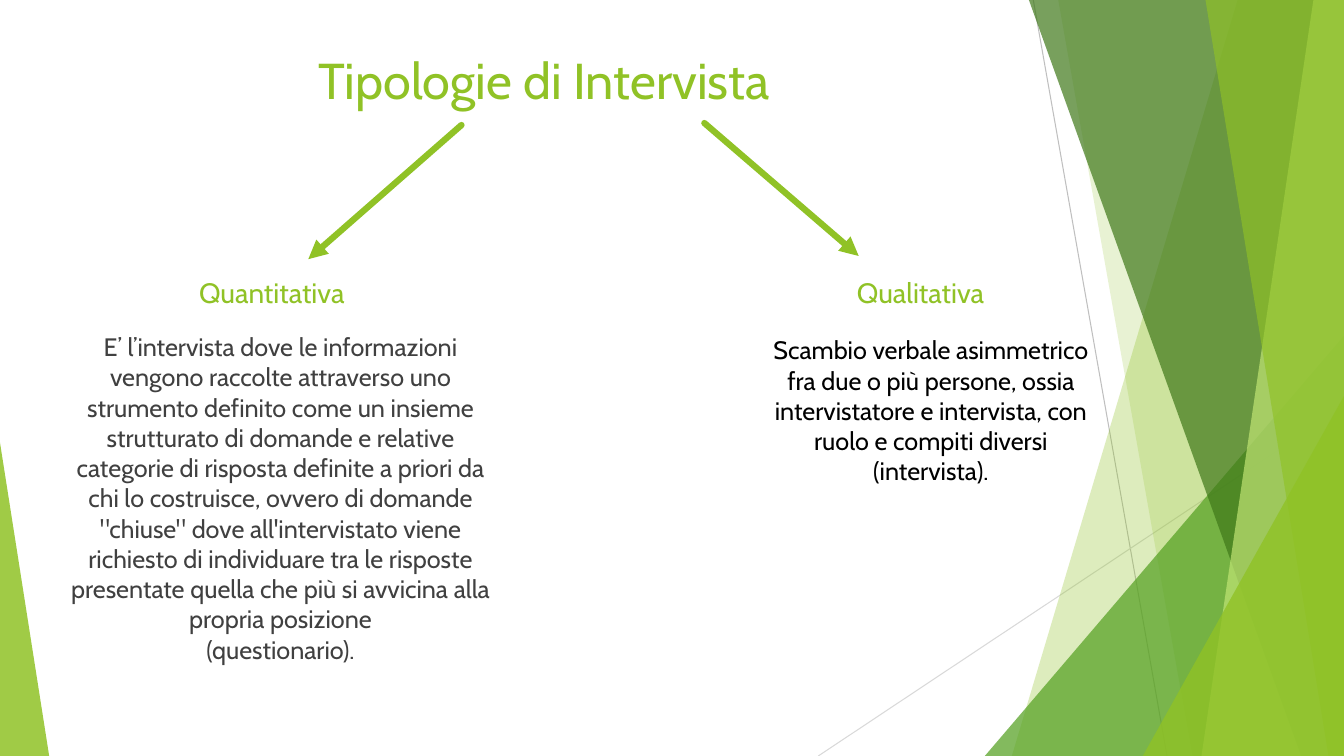
from dataclasses import dataclass

from lxml import etree
from pptx import Presentation
from pptx.dml.color import RGBColor
from pptx.enum.shapes import MSO_CONNECTOR, MSO_SHAPE
from pptx.enum.text import MSO_ANCHOR, MSO_AUTO_SIZE, PP_ALIGN
from pptx.oxml.ns import qn
from pptx.util import Cm, Pt

STRAIGHT = MSO_CONNECTOR.STRAIGHT
TRIANGLE = MSO_SHAPE.ISOSCELES_TRIANGLE
TOP = MSO_ANCHOR.TOP
GROW = MSO_AUTO_SIZE.SHAPE_TO_FIT_TEXT
FIXED = MSO_AUTO_SIZE.NONE
LEFT, CENTER = PP_ALIGN.LEFT, PP_ALIGN.CENTER

WIDTH, HEIGHT = 33.87, 19.05


@dataclass(frozen=True)
class Theme:
    font: str = "Cabin"
    green: str = "90C226"
    mid_green: str = "54A021"
    dark_green: str = "3F7819"
    pale_green: str = "C0E474"
    grey: str = "BFBFBF"
    light_grey: str = "D9D9D9"
    dark_text: str = "404040"
    black: str = "000000"
    title: int = 36
    heading: int = 20
    body: int = 18
    hairline: float = 0.75
    arrow: float = 4.5


class SlideBuilder:
    def __init__(self, slide, theme):
        self.s = slide
        self.theme = theme

    def paint(self, sp, color, opacity):
        """Fill a shape with a translucent colour, without outline or shadow."""
        sp.shadow.inherit = False
        sp.line.fill.background()
        sp.fill.solid()
        sp.fill.fore_color.rgb = RGBColor.from_string(color)
        clr = sp.fill._xPr.find(qn("a:solidFill"))[0]
        etree.SubElement(clr, qn("a:alpha"), val=str(opacity * 1000))

    def band(self, top_x, bottom_x, color, opacity):
        """Band from a slanted left edge to the right side of the slide."""
        corners = [(WIDTH, 0), (WIDTH, HEIGHT), (bottom_x, HEIGHT)]
        fb = self.s.shapes.build_freeform(Cm(top_x), 0)
        fb.add_line_segments([(Cm(x), Cm(y)) for x, y in corners], close=True)
        self.paint(fb.convert_to_shape(), color, opacity)

    def corner(self, x, y, width, apex, color, opacity):
        """Right triangle standing on the bottom edge of the slide."""
        sp = self.s.shapes.add_shape(
            TRIANGLE, Cm(x), Cm(y), Cm(width), Cm(HEIGHT - y))
        sp.adjustments[0] = apex
        self.paint(sp, color, opacity)

    def line(self, start, end, color, weight):
        points = [Cm(v) for v in (*start, *end)]
        cn = self.s.shapes.add_connector(STRAIGHT, *points)
        cn.line.color.rgb = RGBColor.from_string(color)
        cn.line.width = Pt(weight)
        etree.SubElement(cn._element.spPr, qn("a:effectLst"))
        return cn

    def arrow(self, start, end):
        cn = self.line(start, end, self.theme.green, self.theme.arrow)
        ln = cn.line._get_or_add_ln()
        ln.set("cap", "rnd")
        etree.SubElement(ln, qn("a:tailEnd"), type="triangle")

    def text(self, box, text, size, color, align=CENTER, wrap=True,
             auto_size=GROW, before=0):
        tf = self.s.shapes.add_textbox(*[Cm(v) for v in box]).text_frame
        tf.word_wrap = wrap
        tf.auto_size = auto_size
        tf.vertical_anchor = TOP
        tf.text = text
        p = tf.paragraphs[0]
        p.alignment = align
        p.space_before = Pt(before)
        for r in p.runs:
            r.font.name = self.theme.font
            r.font.size = Pt(size)
            r.font.color.rgb = RGBColor.from_string(color)


def main():
    prs = Presentation()
    prs.slide_width, prs.slide_height = Cm(WIDTH), Cm(HEIGHT)
    t = Theme()
    b = SlideBuilder(prs.slides.add_slide(prs.slide_layouts[6]), t)

    # Background decoration, back to front
    b.line((26.04, 0), (29.41, HEIGHT), t.grey, t.hairline)
    b.line((WIDTH, 10.24), (20.62, HEIGHT), t.light_grey, t.hairline)
    b.band(31.19, 25.5, t.green, 30)
    b.band(26.67, 30.05, t.green, 20)
    b.corner(24.82, 8.46, WIDTH - 24.82, 1, t.mid_green, 72)
    b.band(25.93, 32.79, t.dark_green, 70)
    b.band(33.1, 30.28, t.pale_green, 70)
    b.band(30.38, 33.48, t.green, 65)
    b.corner(28.8, 9.98, WIDTH - 28.8, 1, t.green, 80)
    b.corner(0, 11.15, 1.24, 0, t.green, 85)

    # Title
    b.text((7.77, 1.12, 23.88, 3.66), "Tipologie di Intervista",
           t.title, t.green, align=LEFT, auto_size=FIXED)

    # Quantitative branch
    b.arrow((11.63, 3.15), (7.77, 6.53))
    b.text((4.6, 6.83, 4.5, 1.12), "Quantitativa",
           t.heading, t.green, wrap=False)
    b.text((1.37, 8.23, 11.4, 8.38),
           "E’ l’intervista dove le informazioni vengono raccolte attraverso "
           "uno strumento definito come un insieme strutturato di domande e "
           "relative categorie di risposta definite a priori da chi lo "
           "costruisce, ovvero di domande \"chiuse\" dove all'intervistato "
           "viene richiesto di individuare tra le risposte presentate quella "
           "che più si avvicina alla propria posizione\v(questionario).",
           t.body, t.dark_text, auto_size=FIXED, before=10)

    # Qualitative branch
    b.arrow((17.75, 3.1), (21.64, 6.45))
    b.text((21.18, 6.83, 4.04, 1.12), "Qualitativa",
           t.heading, t.green, wrap=False)
    b.text((19.23, 8.31, 8.46, 5.64),
           "Scambio verbale asimmetrico fra due o più persone, ossia "
           "intervistatore e intervista, con ruolo e compiti diversi "
           "(intervista).",
           t.body, t.black)

    prs.save("out.pptx")


if __name__ == "__main__":
    main()
